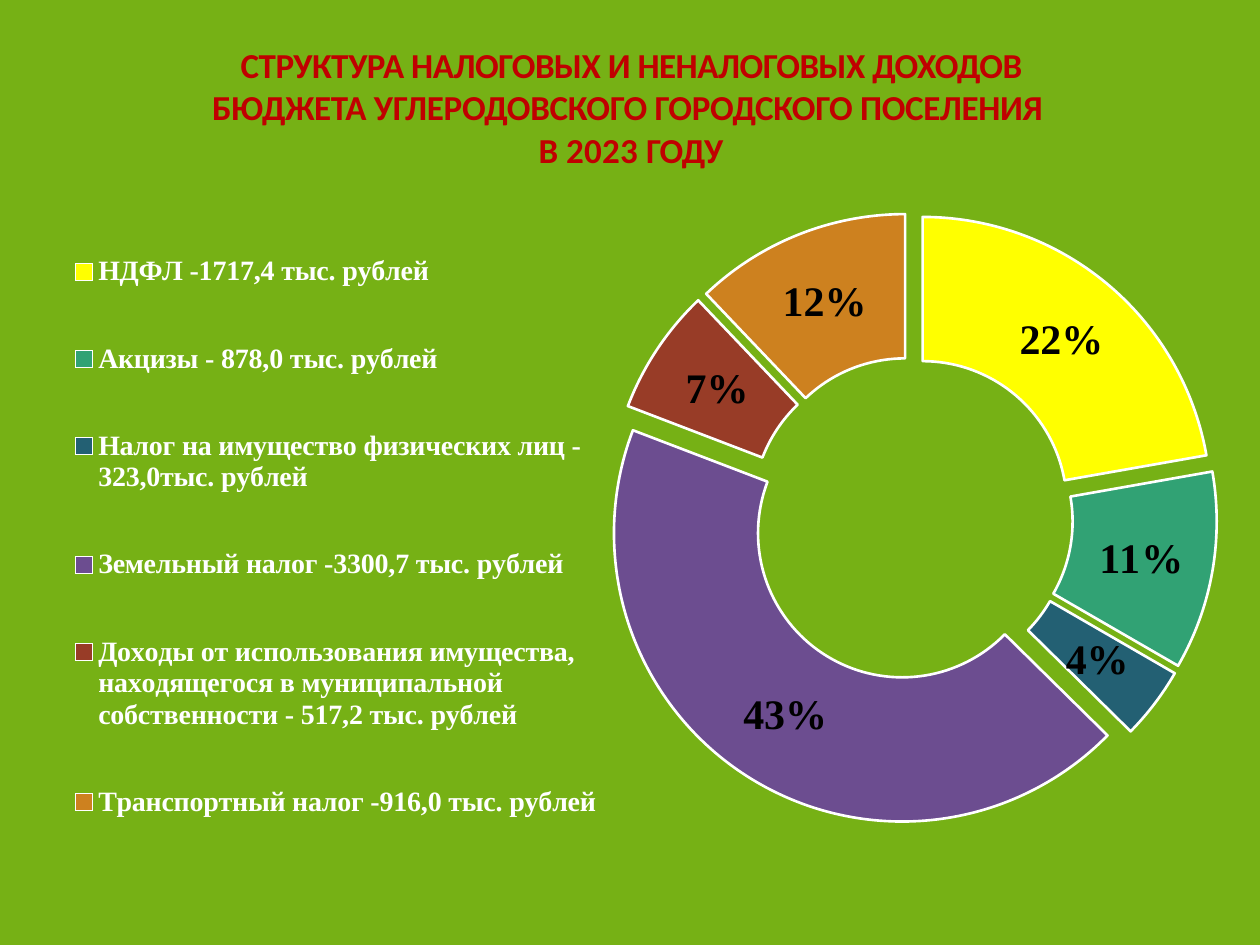
from lxml import etree
from pptx import Presentation
from pptx.chart.data import CategoryChartData
from pptx.dml.color import RGBColor
from pptx.enum.chart import XL_CHART_TYPE, XL_LEGEND_POSITION
from pptx.enum.shapes import MSO_SHAPE
from pptx.enum.text import MSO_ANCHOR, PP_ALIGN
from pptx.oxml.ns import qn
from pptx.util import Emu, Pt

DOUGHNUT = XL_CHART_TYPE.DOUGHNUT
BOTTOM = XL_LEGEND_POSITION.BOTTOM
RECTANGLE = MSO_SHAPE.RECTANGLE
TOP = MSO_ANCHOR.TOP
CENTER = PP_ALIGN.CENTER

GREEN = RGBColor(0x76, 0xB1, 0x15)
RED = RGBColor(0xC0, 0x00, 0x00)
WHITE = RGBColor(0xFF, 0xFF, 0xFF)
BLACK = RGBColor(0x00, 0x00, 0x00)

TITLE = [
    [("СТРУКТУРА НАЛОГОВЫХ И НЕНАЛОГОВЫХ ДОХОДОВ ", -30),
     ("БЮДЖЕТА УГЛЕРОДОВСКОГО ГОРОДСКОГО ПОСЕЛЕНИЯ ", -20)],
    [("В ", 0), ("2023 ", 10), ("ГОДУ", -40)],
]
REVENUES = [
    ("НДФЛ -1717,4 тыс. рублей", 22, RGBColor(0xFF, 0xFF, 0x00)),
    ("Акцизы - 878,0 тыс. рублей", 11, RGBColor(0x31, 0xA2, 0x74)),
    ("Налог на имущество физических лиц - 323,0тыс. рублей", 4,
     RGBColor(0x23, 0x60, 0x73)),
    ("Земельный налог -3300,7 тыс. рублей", 43, RGBColor(0x6C, 0x4D, 0x90)),
    ("Доходы от использования имущества, находящегося в муниципальной "
     "собственности - 517,2 тыс. рублей", 7, RGBColor(0x98, 0x3C, 0x27)),
    ("Транспортный налог -916,0 тыс. рублей", 12, RGBColor(0xCD, 0x81, 0x1F)),
]


def px(n):
    return Emu(n * 914400 // 126)


def set_font(font, name, size, color, bold=True):
    font.name = name
    font.size = Pt(size)
    font.bold = bold
    font.color.rgb = color


def add_backdrop(slide, prs):
    """Cover the slide with a rectangle behind everything else."""
    sp = slide.shapes.add_shape(RECTANGLE, 0, 0, prs.slide_width, prs.slide_height)
    sp.shadow.inherit = False
    sp.fill.solid()
    sp.fill.fore_color.rgb = GREEN
    sp.line.fill.background()
    slide.shapes._spTree.insert(2, sp._element)


def fill_title(sp):
    sp.left, sp.top, sp.width, sp.height = px(173), px(42), px(916), px(131)
    tf = sp.text_frame
    tf.word_wrap = True
    tf.vertical_anchor = TOP
    tf.margin_left = tf.margin_right = tf.margin_bottom = 0
    tf.margin_top = px(1)
    for i, runs in enumerate(TITLE):
        p = tf.add_paragraph() if i else tf.paragraphs[0]
        p.alignment = CENTER
        p.space_before = Pt(1 if i else 0)
        for text, spacing in runs:
            r = p.add_run()
            r.text = text
            set_font(r.font, "Calibri", 20, RED)
            r.font._element.set("spc", str(spacing))


def set_layout(parent, position, x, y, w, h, inner=False):
    """Place a chart part by fractions of the chart area."""
    for old in parent.findall(qn("c:layout")):
        parent.remove(old)
    layout = etree.Element(qn("c:layout"))
    manual = etree.SubElement(layout, qn("c:manualLayout"))
    values = [("xMode", "edge"), ("yMode", "edge"),
              ("x", x), ("y", y), ("w", w), ("h", h)]
    if inner:
        values.insert(0, ("layoutTarget", "inner"))
    for tag, value in values:
        etree.SubElement(manual, qn(f"c:{tag}"), val=str(value))
    parent.insert(position, layout)


def explode(series, percent):
    explosion = etree.Element(qn("c:explosion"), val=str(percent))
    series._element.find(qn("c:spPr")).addnext(explosion)


def add_doughnut(slide):
    data = CategoryChartData()
    data.categories = [name for name, _, _ in REVENUES]
    data.add_series("Series 1", [share for _, share, _ in REVENUES])
    chart = slide.shapes.add_chart(
        DOUGHNUT, px(42), px(171), px(1176), px(732), data).chart
    set_font(chart.font, "Quicksand", 10, WHITE, bold=False)
    chart.has_title = False

    chart.has_legend = True
    legend = chart.legend
    legend.position = BOTTOM
    legend.include_in_layout = False
    set_font(legend.font, "Times New Roman", 16, WHITE)
    set_layout(legend._element, 1, 0.02, 0.04, 0.46, 0.92)

    plot = chart.plots[0]
    plot.vary_by_categories = True
    plot._element.find(qn("c:holeSize")).set("val", "61")
    set_layout(plot._element.getparent(), 0, 0.48, 0.03, 0.52, 0.89, inner=True)

    series = plot.series[0]
    series.format.line.color.rgb = WHITE
    explode(series, 12)
    for i, (_, _, color) in enumerate(REVENUES):
        fmt = series.points[i].format
        fmt.fill.solid()
        fmt.fill.fore_color.rgb = color
        fmt.line.color.rgb = WHITE
        fmt.line.width = Pt(1.5)

    labels = series.data_labels
    labels.show_percentage = True
    labels.show_value = False
    labels.number_format = "0%"
    labels.number_format_is_linked = False
    set_font(labels.font, "Times New Roman", 24, BLACK)


def main():
    prs = Presentation()
    prs.slide_width, prs.slide_height = px(1260), px(945)
    slide = prs.slides.add_slide(prs.slide_layouts[5])
    add_backdrop(slide, prs)
    fill_title(slide.shapes.title)
    add_doughnut(slide)
    prs.save("out.pptx")


if __name__ == "__main__":
    main()
